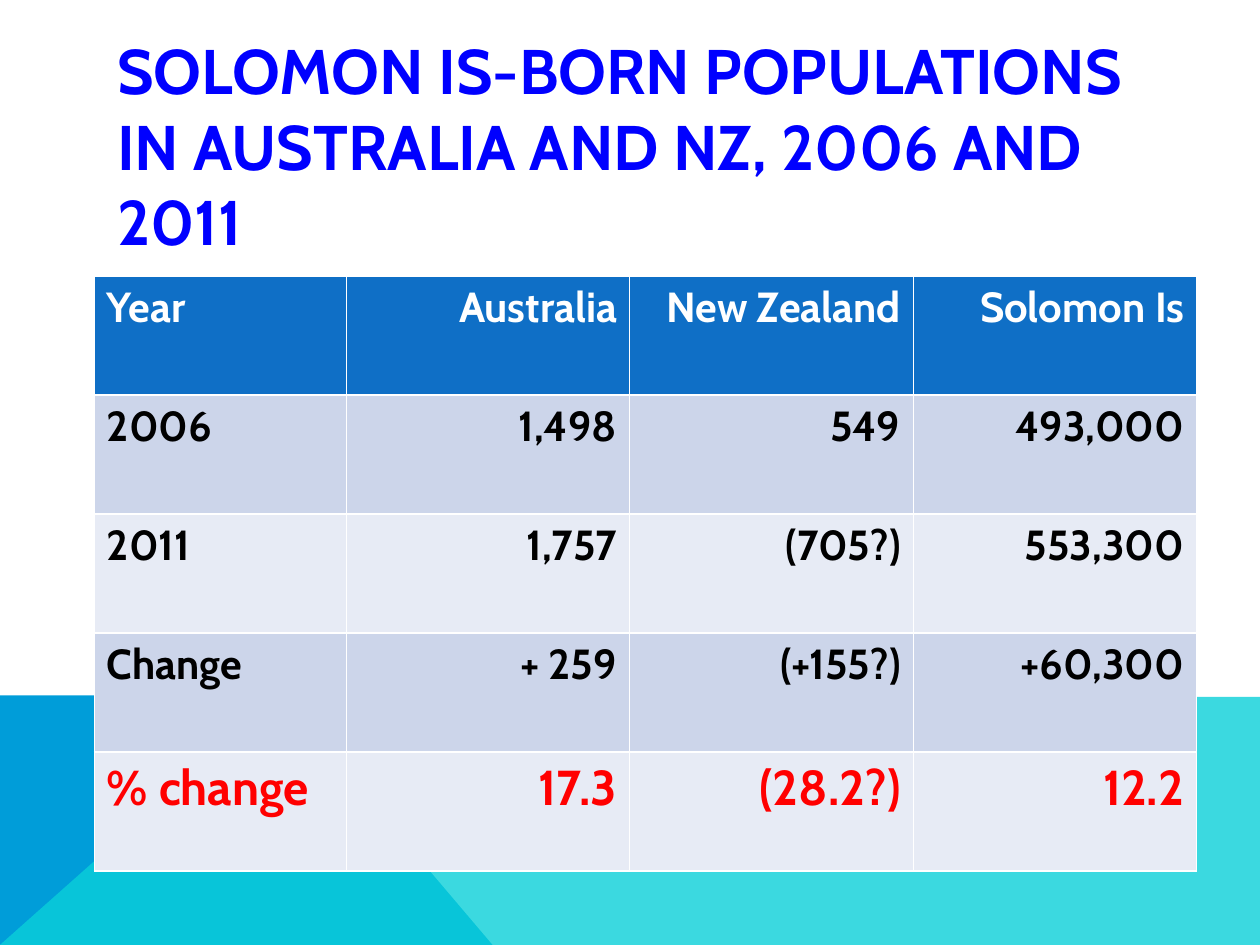
import pptx
import pptx.dml.color
import pptx.enum.text
import pptx.oxml.ns
import pptx.util
from dataclasses import dataclass
from lxml import etree

Cm = pptx.util.Cm
Pt = pptx.util.Pt
rgb = pptx.dml.color.RGBColor.from_string


@dataclass(frozen=True)
class Theme:
    font: str = "Cabin"
    title: str = "0000FF"
    header: str = "0F6FC6"
    bands: tuple = ("CCD5EA", "E7EBF5")
    white: str = "FFFFFF"
    text: str = "000000"
    highlight: str = "FF0000"
    blue: str = "009DD9"
    turquoise: str = "0BD0D9"
    title_size: int = 36
    body_size: int = 24
    highlight_size: int = 28


theme = Theme()


def add_child(parent, tag, **attributes):
    return etree.SubElement(parent, pptx.oxml.ns.qn(tag), attributes)


def style_paragraph(paragraph, size, color):
    paragraph.font.name = theme.font
    paragraph.font.size = Pt(size)
    paragraph.font.bold = True
    paragraph.font.color.rgb = rgb(color)


deck = pptx.Presentation()
deck.slide_width, deck.slide_height = Cm(25.4), Cm(19.05)
slide = deck.slides.add_slide(deck.slide_layouts[6])

bands = [
    (theme.blue, 100, [(0, 19.05), (0, 14.02), (5.66, 14.02), (9.93, 19.05)]),
    (theme.turquoise, 80, [(0, 19.05), (5.66, 14.02), (25.4, 14.05), (25.4, 19.05)]),
]
for color, opacity, corners in bands:
    start, *rest = [(Cm(x), Cm(y)) for x, y in corners]
    outline = slide.shapes.build_freeform(*start)
    outline.add_line_segments(rest, close=True)
    band = outline.convert_to_shape()
    band.shadow.inherit = False
    band.line.fill.background()
    band.fill.solid()
    band.fill.fore_color.rgb = rgb(color)
    if opacity < 100:
        swatch = band.fill._xPr.find(".//" + pptx.oxml.ns.qn("a:srgbClr"))
        add_child(swatch, "a:alpha", val=str(opacity * 1000))

title = slide.shapes.add_textbox(Cm(2.11), Cm(1.47), Cm(21.06), Cm(2.9)).text_frame
title.word_wrap = True
title.vertical_anchor = pptx.enum.text.MSO_ANCHOR.MIDDLE
title.text = "SOLOMON IS-BORN POPULATIONS IN AUSTRALIA AND NZ, 2006 AND 2011"
style_paragraph(title.paragraphs[0], theme.title_size, theme.title)

populations = [
    ("Year", "Australia", "New Zealand", "Solomon Is"),
    ("2006", "1,498", "549", "493,000"),
    ("2011", "1,757", "(705?)", "553,300"),
    ("Change", "+ 259", "(+155?)", "+60,300"),
    ("% change", "17.3", "(28.2?)", "12.2"),
]
grid = slide.shapes.add_table(5, 4, Cm(1.9), Cm(5.56), Cm(22.23), Cm(12)).table
for column, width in zip(grid.columns, (5.08, 5.715, 5.715, 5.715)):
    column.width = Cm(width)

for row, values in enumerate(populations):
    grid.rows[row].height = Cm(2.4)
    fill, color, size = theme.bands[(row + 1) % 2], theme.text, theme.body_size
    if row == 0:
        fill, color = theme.header, theme.white
    elif row == len(populations) - 1:
        color, size = theme.highlight, theme.highlight_size
    for column, value in enumerate(values):
        cell = grid.cell(row, column)
        cell.text = value
        paragraph = cell.text_frame.paragraphs[0]
        style_paragraph(paragraph, size, color)
        if column:
            paragraph.alignment = pptx.enum.text.PP_ALIGN.RIGHT
        for side in "LRTB":
            border = add_child(cell._tc.get_or_add_tcPr(), f"a:ln{side}", w=str(Pt(1)))
            add_child(add_child(border, "a:solidFill"), "a:srgbClr", val=theme.white)
        cell.fill.solid()
        cell.fill.fore_color.rgb = rgb(fill)

deck.save("out.pptx")
